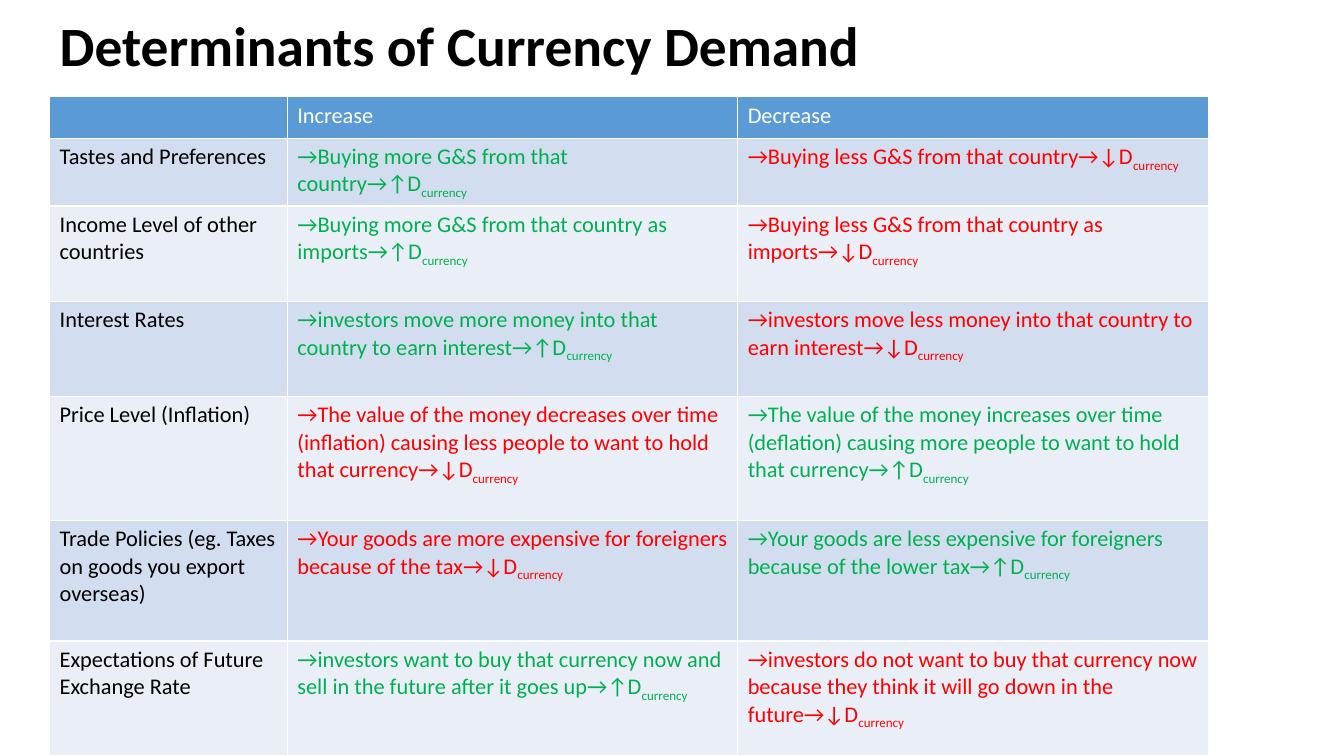
from dataclasses import dataclass

from pptx import Presentation
from pptx.dml.color import RGBColor
from pptx.enum.text import MSO_ANCHOR, PP_ALIGN
from pptx.slide import Slide
from pptx.table import Table, _Cell
from pptx.util import Cm, Pt

BLACK = RGBColor(0x00, 0x00, 0x00)
WHITE = RGBColor(0xFF, 0xFF, 0xFF)
GREEN = RGBColor(0x00, 0xB0, 0x50)
RED = RGBColor(0xFF, 0x00, 0x00)
HEADER_BLUE = RGBColor(0x5B, 0x9B, 0xD5)
BANDS = (RGBColor(0xD2, 0xDE, 0xEF), RGBColor(0xEA, 0xEF, 0xF7))

FONT = "Calibri"
LEFT, WIDTH = Cm(1.25), Cm(29.2)
COLUMN_WIDTHS = (5.99, 11.35, 11.86)
HEADINGS = ("", "Increase", "Decrease")
HEADER_HEIGHT = 1.04


@dataclass(frozen=True)
class Determinant:
    name: str
    increase: str
    decrease: str
    height: float
    increase_raises_demand: bool = True


DETERMINANTS = (
    Determinant(
        "Tastes and Preferences",
        "Buying more G&S from that country",
        "Buying less G&S from that country",
        1.71,
    ),
    Determinant(
        "Income Level of other countries",
        "Buying more G&S from that country as imports",
        "Buying less G&S from that country as imports",
        2.4,
    ),
    Determinant(
        "Interest Rates",
        "investors move more money into that country to earn interest",
        "investors move less money into that country to earn interest",
        2.4,
    ),
    Determinant(
        "Price Level (Inflation)",
        "The value of the money decreases over time (inflation) "
        "causing less people to want to hold that currency",
        "The value of the money increases over time (deflation) "
        "causing more people to want to hold that currency",
        3.12,
        False,
    ),
    Determinant(
        "Trade Policies (eg. Taxes on goods you export overseas)",
        "Your goods are more expensive for foreigners because of the tax",
        "Your goods are less expensive for foreigners because of the lower tax",
        3.04,
        False,
    ),
    Determinant(
        "Expectations of Future Exchange Rate",
        "investors want to buy that currency now and sell in the future after it goes up",
        "investors do not want to buy that currency now "
        "because they think it will go down in the future",
        2.9,
    ),
)


def fill_cell(cell: _Cell, text: str, color: RGBColor, background: RGBColor,
              subscript: str = "") -> None:
    cell.fill.solid()
    cell.fill.fore_color.rgb = background
    paragraph = cell.text_frame.paragraphs[0]
    paragraph.text = text
    if subscript:
        suffix = paragraph.add_run()
        suffix.text = subscript
        suffix._r.get_or_add_rPr().set("baseline", "-25000")
    for run in paragraph.runs:
        run.font.name = FONT
        run.font.size = Pt(16)
        run.font.bold = False
        run.font.color.rgb = color


def fill_effect(cell: _Cell, reason: str, raises_demand: bool, background: RGBColor) -> None:
    arrow, color = ("↑", GREEN) if raises_demand else ("↓", RED)
    fill_cell(cell, f"→{reason}→{arrow}D", color, background, "currency")


def fill_determinant(table: Table, row: int, determinant: Determinant) -> None:
    band = BANDS[(row - 1) % len(BANDS)]
    raises = determinant.increase_raises_demand
    table.rows[row].height = Cm(determinant.height)
    fill_cell(table.cell(row, 0), determinant.name, BLACK, band)
    fill_effect(table.cell(row, 1), determinant.increase, raises, band)
    fill_effect(table.cell(row, 2), determinant.decrease, not raises, band)


def add_heading(slide: Slide) -> None:
    heading = slide.shapes.title
    heading.left, heading.top, heading.width, heading.height = LEFT, Cm(0.43), WIDTH, Cm(1.57)
    heading.text_frame.text = "Determinants of Currency Demand"
    heading.text_frame.vertical_anchor = MSO_ANCHOR.MIDDLE
    paragraph = heading.text_frame.paragraphs[0]
    paragraph.alignment = PP_ALIGN.LEFT
    paragraph.line_spacing = 0.9
    font = paragraph.runs[0].font
    font.name, font.size, font.bold = FONT, Pt(39.6), True
    font.color.rgb = BLACK


def add_determinants(slide: Slide) -> None:
    height = HEADER_HEIGHT + sum(determinant.height for determinant in DETERMINANTS)
    table = slide.shapes.add_table(
        len(DETERMINANTS) + 1, len(HEADINGS), LEFT, Cm(2.44), WIDTH, Cm(height)
    ).table
    table.rows[0].height = Cm(HEADER_HEIGHT)
    for index, (width, label) in enumerate(zip(COLUMN_WIDTHS, HEADINGS)):
        table.columns[index].width = Cm(width)
        fill_cell(table.cell(0, index), label, WHITE, HEADER_BLUE)
    for row, determinant in enumerate(DETERMINANTS, start=1):
        fill_determinant(table, row, determinant)


def main() -> None:
    presentation = Presentation()
    presentation.slide_width, presentation.slide_height = Cm(33.87), Cm(19.05)
    slide = presentation.slides.add_slide(presentation.slide_layouts.get_by_name("Title Only"))
    add_heading(slide)
    add_determinants(slide)
    presentation.save("out.pptx")


if __name__ == "__main__":
    main()
